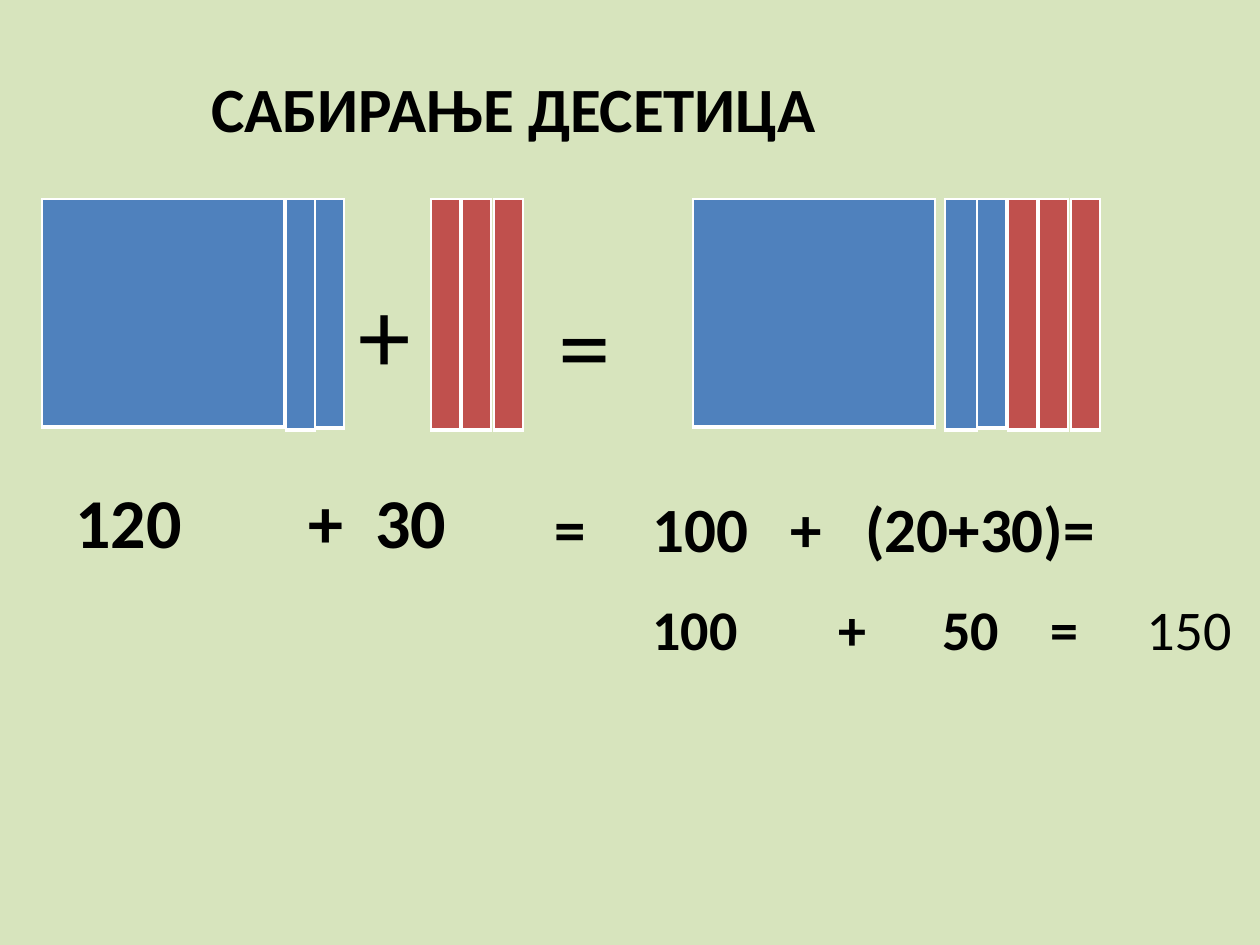
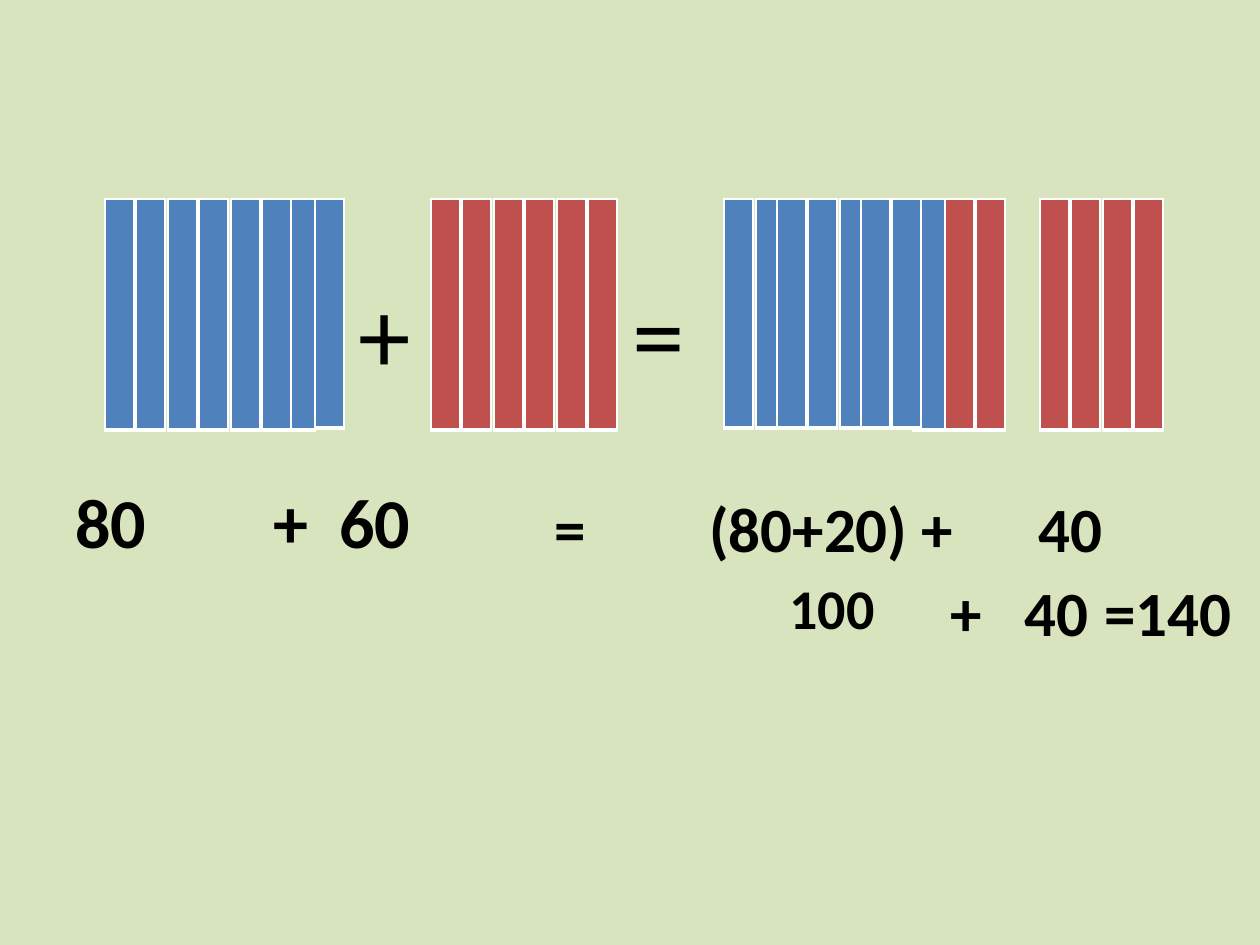
from lxml import etree
from pptx import Presentation
from pptx.dml.color import RGBColor
from pptx.enum.text import MSO_AUTO_SIZE
from pptx.oxml.ns import qn
from pptx.util import Pt

FIT_SHAPE = MSO_AUTO_SIZE.SHAPE_TO_FIT_TEXT
EMU_PER_PX = 914400 / 126
SLIDE_SIZE = (1260, 945)

BACKGROUND = RGBColor(0xD7, 0xE4, 0xBD)
BLUE = RGBColor(0x4F, 0x81, 0xBD)
RED = RGBColor(0xC0, 0x50, 0x4D)
WHITE = RGBColor(0xFF, 0xFF, 0xFF)
BLACK = RGBColor(0, 0, 0)
FONT = "Calibri"

# Block sizes: a square is a hundred, a strip is a ten
BLOCK_TOP = 199
HUNDRED = (242, 228)
TEN = (29, 231)
SHORT_TEN = (29, 229)
WIDE_TEN = (32, 231)
BORDERS = {"a:lnL": 1, "a:lnR": 1, "a:lnT": 1, "a:lnB": 3}


def strip_lefts(start, count):
    """Left edges of strips that repeat every 31.5 px."""
    return [start + i * 63 // 2 for i in range(count)]


# Blocks: colour, size, left edges, from back to front
# Texts: text, box (left, top, width, height), format; tabs and indent in px
EQUALS = ("=", (514, 483, 179, 89), dict(size=36, indent=28))
PLUS_SIGN = ("+", (346, 262, 84, 140), dict(size=60, bold=False))

SLIDES = [
    dict(
        blocks=[
            (BLUE, HUNDRED, [42, 693]),
            (BLUE, SHORT_TEN, [315, 977]),
            (BLUE, TEN, [286]),
            (BLUE, WIDE_TEN, [945]),
            (RED, TEN, strip_lefts(431, 3) + strip_lefts(1008, 3)),
        ],
        texts=[
            ("САБИРАЊЕ ДЕСЕТИЦА", (199, 63, 788, 89), dict(size=36)),
            PLUS_SIGN,
            ("=", (546, 273, 126, 140), dict(size=60, bold=False)),
            ("120\t+\t30", (63, 472, 735, 97), dict(size=40, tabs=(233, 300))),
            EQUALS,
            ("100\t+\t(20+30)=", (640, 483, 578, 89),
             dict(size=36, tabs=(138, 213))),
            ("100\t+\t50\t=", (640, 588, 557, 81),
             dict(size=32, tabs=(186, 290, 398))),
            ("150", (1134, 588, 126, 81), dict(size=32, bold=False)),
        ],
    ),
    dict(
        blocks=[
            (BLUE, SHORT_TEN, [315]),
            (BLUE, TEN, [286] + strip_lefts(105, 6)),
            (BLUE, WIDE_TEN, [913]),
            (BLUE, SHORT_TEN, [892, 724, 756, 777, 808, 840, 861]),
            (RED, TEN, strip_lefts(431, 6) + strip_lefts(945, 2)
             + strip_lefts(1040, 4)),
        ],
        texts=[
            PLUS_SIGN,
            ("=", (620, 262, 126, 140), dict(size=60, bold=False)),
            ("80\t+\t60", (63, 472, 494, 97), dict(size=40, tabs=(198, 264))),
            EQUALS,
            ("(80+20) +\t40", (640, 483, 578, 89),
             dict(size=36, indent=57, tabs=(329,))),
            ("100", (777, 567, 199, 81), dict(size=32)),
            ("+\t40", (924, 567, 252, 89),
             dict(size=36, indent=14, tabs=(74,))),
            ("=140", (1092, 567, 199, 89), dict(size=36)),
        ],
    ),
]


def px(length):
    return round(length * EMU_PER_PX)


def add_block(page, color, size, left):
    """Draw one block as a single-cell table with white borders."""
    width, height = size
    frame = page.shapes.add_table(
        1, 1, px(left), px(BLOCK_TOP), px(width), px(height))
    cell = frame.table.cell(0, 0)
    cell.margin_left = cell.margin_right = 0
    properties = cell._tc.get_or_add_tcPr()
    for tag, points in BORDERS.items():
        line = etree.SubElement(properties, qn(tag), w=str(Pt(points)))
        fill = etree.SubElement(line, qn("a:solidFill"))
        etree.SubElement(fill, qn("a:srgbClr"), val=str(WHITE))
    cell.fill.solid()
    cell.fill.fore_color.rgb = color


def add_text(page, text, place, size, bold=True, indent=0, tabs=()):
    box = page.shapes.add_textbox(*map(px, place))
    frame = box.text_frame
    frame.word_wrap = True
    frame.auto_size = FIT_SHAPE
    para = frame.paragraphs[0]
    properties = para._p.get_or_add_pPr()
    if indent:
        properties.set("marL", str(px(indent)))
    if tabs:
        stops = etree.SubElement(properties, qn("a:tabLst"))
        for stop in tabs:
            etree.SubElement(stops, qn("a:tab"), pos=str(px(stop)), algn="l")
    span = para.add_run()
    span.text = text
    span.font.name = FONT
    span.font.size = Pt(size)
    span.font.bold = bold
    span.font.color.rgb = BLACK


def main():
    deck = Presentation()
    deck.slide_width, deck.slide_height = map(px, SLIDE_SIZE)
    for content in SLIDES:
        page = deck.slides.add_slide(deck.slide_layouts[6])
        page.background.fill.solid()
        page.background.fill.fore_color.rgb = BACKGROUND
        for color, size, lefts in content["blocks"]:
            for left in lefts:
                add_block(page, color, size, left)
        for text, place, style in content["texts"]:
            add_text(page, text, place, **style)
    deck.save("out.pptx")


if __name__ == "__main__":
    main()
